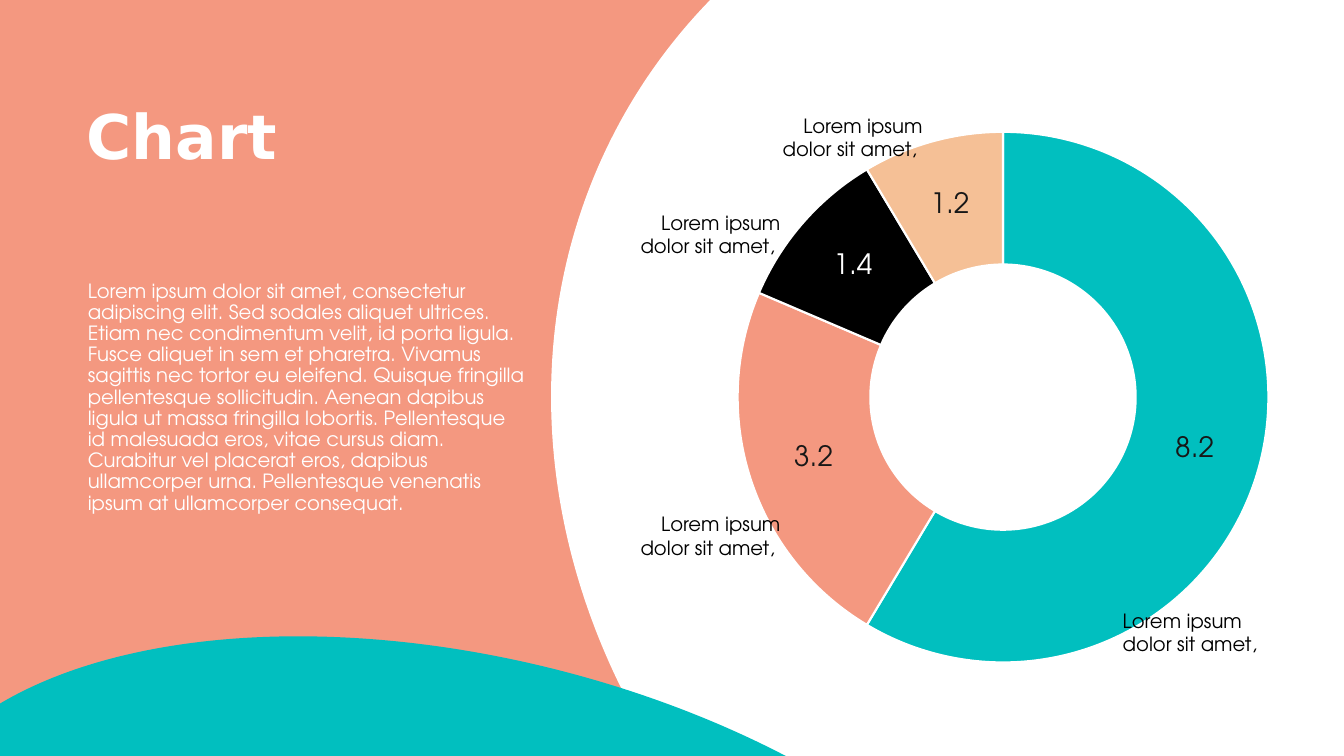
"""Build a slide with a text column on the left and a labelled doughnut chart on the right."""
from lxml.etree import SubElement
from pptx import Presentation
from pptx.chart.data import CategoryChartData
from pptx.dml.color import RGBColor
from pptx.enum.chart import XL_CHART_TYPE
from pptx.enum.shapes import MSO_SHAPE
from pptx.enum.text import MSO_ANCHOR, MSO_AUTO_SIZE, PP_ALIGN
from pptx.oxml.ns import qn
from pptx.util import Inches, Pt

CORAL, TEAL, SAND = "F49880", "01BFBF", "F5C096"
WHITE, BLACK, INK = "FFFFFF", "000000", "171717"
HEADING, TEXT = "DejaVu Sans", "TeX Gyre Adventor"

deck = Presentation()
deck.slide_width, deck.slide_height = Inches(13.33), Inches(7.5)


def area(left, top, width, height):
    """Turn percentages of the slide into left, top, width and height."""
    across, down = deck.slide_width / 100, deck.slide_height / 100
    return int(left * across), int(top * down), int(width * across), int(height * down)


def style(font, face, size, colour, bold=False):
    """Set the face, size, colour and weight of a font."""
    font.name, font.size, font.bold = face, Pt(size), bold
    font.color.rgb = RGBColor.from_string(colour)


slide = deck.slides.add_slide(deck.slide_layouts[1])
slide.background.fill.solid()
slide.background.fill.fore_color.rgb = RGBColor.from_string(CORAL)
heading, story = slide.placeholders

for place, angle, colour in [
    ((39.45, -21.33, 106.65, 166.8), 30.3, WHITE),
    ((-9.15, 87.2, 89.1, 84), 14, TEAL),
]:
    curve = slide.shapes.add_shape(MSO_SHAPE.OVAL, *area(*place))
    curve.rotation = angle
    curve.shadow.inherit = False
    curve.fill.solid()
    curve.fill.fore_color.rgb = RGBColor.from_string(colour)
    curve.line.fill.background()
    heading.element.addprevious(curve.element)

STORY = (
    "Lorem ipsum dolor sit amet, consectetur adipiscing elit. Sed sodales aliquet ultrices. "
    "Etiam nec condimentum velit, id porta ligula. Fusce aliquet in sem et pharetra. "
    "Vivamus sagittis nec tortor eu eleifend. Quisque fringilla pellentesque sollicitudin. "
    "Aenean dapibus ligula ut massa fringilla lobortis. Pellentesque id malesuada eros, "
    "vitae cursus diam. Curabitur vel placerat eros, dapibus ullamcorper urna. "
    "Pellentesque venenatis ipsum at ullamcorper consequat."
)
for holder, place, words, face, size, bold in [
    (heading, (5.7, 13.33, 34.05, 21.6), "Chart", HEADING, 44, True),
    (story, (5.78, 36.53, 34.05, 43.33), STORY, TEXT, 14, False),
]:
    holder.left, holder.top, holder.width, holder.height = area(*place)
    frame = holder.text_frame
    frame.text = words
    frame.word_wrap = True
    frame.auto_size = MSO_AUTO_SIZE.NONE
    frame.vertical_anchor = MSO_ANCHOR.TOP
    paragraph = frame.paragraphs[0]
    paragraph.alignment = PP_ALIGN.LEFT
    paragraph.line_spacing = 0.9
    paragraph.space_before = Pt(0)
    properties = paragraph._p.get_or_add_pPr()
    properties.set("marL", "0")
    properties.set("indent", "0")
    SubElement(properties, qn("a:buNone"))
    style(paragraph.font, face, size, WHITE, bold)

shares = CategoryChartData()
shares.categories = ["1", "2", "3", "4"]
shares.add_series("Series 1", (8.2, 3.2, 1.4, 1.2))
doughnut = slide.shapes.add_chart(
    XL_CHART_TYPE.DOUGHNUT, *area(53.33, 15.6, 42.6, 73.87), shares
).chart
doughnut.has_legend = False
doughnut.has_title = False
style(doughnut.font, TEXT, 20, INK)
doughnut.element.xpath(".//c:holeSize")[0].set("val", "52")

plot = doughnut.plots[0]
plot.vary_by_categories = True
ring = plot.series[0]
ring.data_labels.show_value = True
ring.data_labels.show_percentage = False
style(ring.data_labels.font, TEXT, 20, INK)
for index, colour in enumerate([TEAL, CORAL, BLACK, SAND]):
    sector = ring.points[index]
    sector.format.fill.solid()
    sector.format.fill.fore_color.rgb = RGBColor.from_string(colour)
    sector.format.line.color.rgb = RGBColor.from_string(WHITE)
    sector.format.line.width = Pt(1.5)
    if colour == BLACK:
        style(sector.data_label.font, TEXT, 20, WHITE)

CAPTION = "Lorem ipsum dolor sit amet,"
for left, top, words, side in [
    (55.35, 14.4, CAPTION + " ", PP_ALIGN.RIGHT),
    (44.78, 27.2, CAPTION + " ", PP_ALIGN.RIGHT),
    (82.8, 79.87, CAPTION, PP_ALIGN.LEFT),
    (44.78, 67.07, CAPTION + " ", PP_ALIGN.RIGHT),
]:
    caption = slide.shapes.add_textbox(*area(left, top, 14.03, 7.6)).text_frame
    caption.text = words
    caption.word_wrap = True
    caption.auto_size = MSO_AUTO_SIZE.SHAPE_TO_FIT_TEXT
    caption.paragraphs[0].alignment = side
    style(caption.paragraphs[0].font, TEXT, 14, BLACK)

deck.save("out.pptx")
